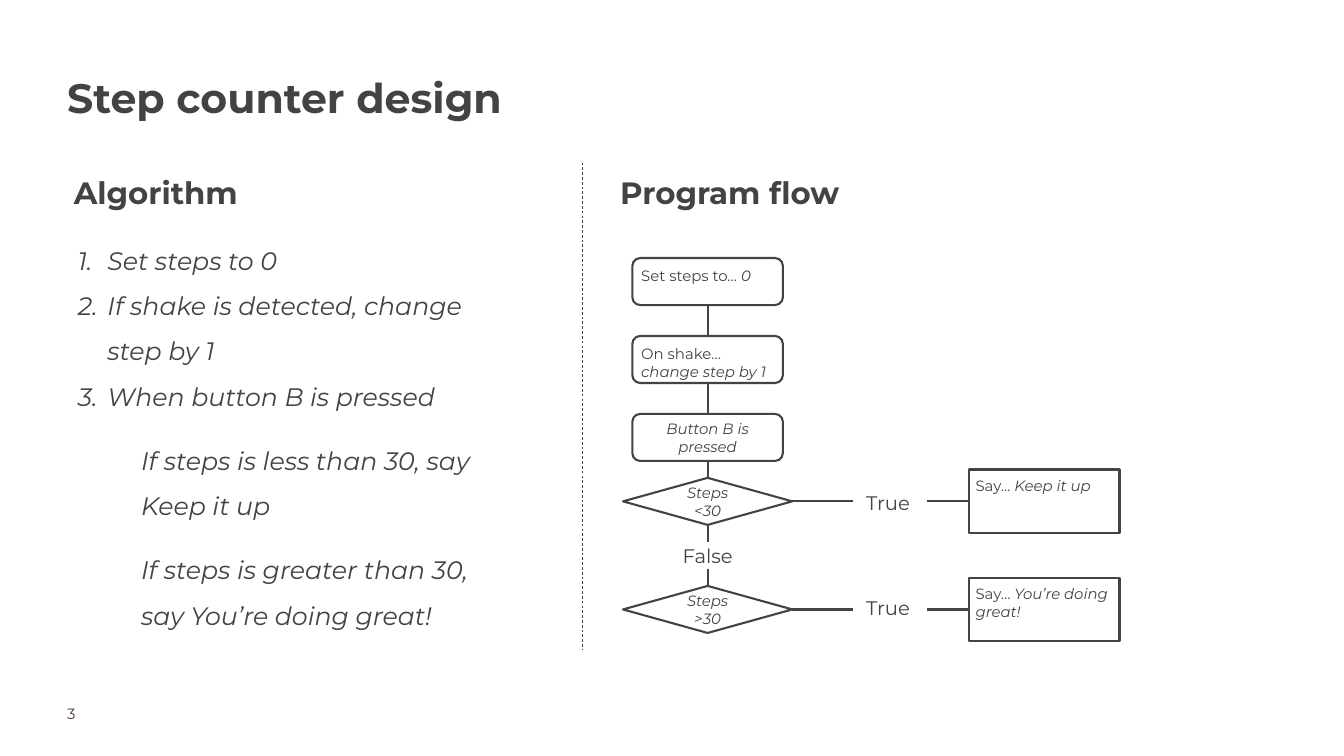
from dataclasses import dataclass

import pptx
import pptx.dml.color
import pptx.enum.dml
import pptx.enum.shapes
import pptx.enum.text
import pptx.oxml
import pptx.oxml.ns
import pptx.util

Pt = pptx.util.Pt
SHAPE = pptx.enum.shapes.MSO_SHAPE
ALIGN = pptx.enum.text.PP_ALIGN
ANCHOR = pptx.enum.text.MSO_ANCHOR
TOP, LEFT, BOTTOM, RIGHT = range(4)

FONT = "Montserrat"
COLORS = {"ink": "434343", "page number": "4B3241"}
INSET = 7.2

FLOW_X = 758.2
STEP_TOP, STEP_PITCH = 276.5, 83.5
STEP_SIZE = (161.3, 50.4)
DECISION_SIZE = (181.4, 50.4)
SAY_LEFT, SAY_SIZE = 1038.2, (161.3, 68.4)
TRUE_LEFT, TRUE_END, TRUE_RESUME = 902.9, 914.4, 993.6
FALSE_TOP, FALSE_END, FALSE_RESUME = 575.3, 580.3, 609.8


@dataclass
class Span:
    text: str
    size: float
    bold: bool = False
    italic: bool = False
    color: str = "ink"


@dataclass
class Para:
    spans: list[Span]
    align: ALIGN = ALIGN.LEFT
    line_spacing: float = 1.0
    space_before: float = 0
    indent: float = 0
    hanging: float = 0
    numbered: bool = False


@dataclass
class Branch:
    question: str
    middle: float
    label_top: float
    answer: str


STEPS = [
    Para([Span("Set steps to… ", 16), Span("0", 16, italic=True)]),
    Para([Span("On shake… ", 16), Span("change step by 1", 16, italic=True)]),
    Para([Span("Button B is pressed", 16, italic=True)], ALIGN.CENTER),
]
BRANCHES = [
    Branch("Steps <30", 537.2, 518.4, "Keep it up"),
    Branch("Steps >30", 653, 630.7, "You’re doing great!"),
]
NUMBERED = ["Set steps to 0", "If shake is detected, change step by 1", "When button B is pressed"]
CONDITIONS = ["If steps is less than 30, say Keep it up", "If steps is greater than 30, say You’re doing great!"]


def color(name: str) -> pptx.dml.color.RGBColor:
    return pptx.dml.color.RGBColor.from_string(COLORS[name])


def number_paragraph(para) -> None:
    """Give a paragraph automatic 1. 2. 3. numbering."""
    properties = para._p.get_or_add_pPr()
    namespace = pptx.oxml.ns.nsdecls("a")
    for xml in (
        f'<a:buClr {namespace}><a:srgbClr val="{COLORS["ink"]}"/></a:buClr>',
        f'<a:buFont {namespace} typeface="{FONT}"/>',
        f'<a:buAutoNum {namespace} type="arabicPeriod"/>',
    ):
        properties.append(pptx.oxml.parse_xml(xml))


def write(box, paras: list[Para], anchor: ANCHOR = ANCHOR.TOP, inset: float = INSET) -> None:
    frame = box.text_frame
    frame.word_wrap = True
    frame.vertical_anchor = anchor
    frame.margin_left = frame.margin_right = Pt(inset)
    frame.margin_top = frame.margin_bottom = Pt(inset)
    for index, content in enumerate(paras):
        para = frame.add_paragraph() if index else frame.paragraphs[0]
        if content.numbered:
            number_paragraph(para)
        para.alignment = content.align
        para.line_spacing = content.line_spacing
        para.space_before = Pt(content.space_before)
        if content.indent:
            properties = para._p.get_or_add_pPr()
            properties.set("marL", str(Pt(content.indent)))
            properties.set("indent", str(Pt(-content.hanging)))
        for span in content.spans:
            run = para.add_run()
            run.text = span.text
            run.font.name = FONT
            run.font.size = Pt(span.size)
            run.font.bold = span.bold
            run.font.italic = span.italic
            run.font.color.rgb = color(span.color)


def add_text(page, left: float, top: float, width: float, height: float, paras: list[Para],
             anchor: ANCHOR = ANCHOR.TOP, inset: float = INSET) -> None:
    box = page.shapes.add_textbox(Pt(left), Pt(top), Pt(width), Pt(height))
    write(box, paras, anchor, inset)


def add_box(page, kind: SHAPE, left: float, top: float, size: tuple[float, float], para: Para):
    box = page.shapes.add_shape(kind, Pt(left), Pt(top), Pt(size[0]), Pt(size[1]))
    box.shadow.inherit = False
    box.fill.background()
    box.line.color.rgb = color("ink")
    box.line.width = Pt(2.25)
    write(box, [para], ANCHOR.MIDDLE if para.align == ALIGN.CENTER else ANCHOR.TOP)
    return box


def add_line(page, start: tuple[float, float], end: tuple[float, float], width: float = 2.25):
    line = page.shapes.add_connector(
        pptx.enum.shapes.MSO_CONNECTOR.STRAIGHT, *(Pt(value) for value in start + end))
    line.line.color.rgb = color("ink")
    line.line.width = Pt(width)
    line._element.spPr.append(
        pptx.oxml.parse_xml(f'<a:effectLst {pptx.oxml.ns.nsdecls("a")}/>'))
    return line


def link_down(page, upper, lower) -> None:
    line = add_line(page, (FLOW_X, 0), (FLOW_X, 0))
    line.begin_connect(upper, BOTTOM)
    line.end_connect(lower, TOP)


def add_label(page, text: str, left: float, top: float, width: float) -> None:
    add_text(page, left, top, width, 40.3, [Para([Span(text, 21)], ALIGN.CENTER)], ANCHOR.MIDDLE)


def add_branch(page, branch: Branch):
    """Draw a decision, its True label and its answer; return the decision."""
    width, height = DECISION_SIZE
    middle = branch.middle
    decision = add_box(page, SHAPE.FLOWCHART_DECISION, FLOW_X - width / 2, middle - height / 2,
                       DECISION_SIZE, Para([Span(branch.question, 16, italic=True)], ALIGN.CENTER))
    answer = add_box(page, SHAPE.RECTANGLE, SAY_LEFT, middle - SAY_SIZE[1] / 2, SAY_SIZE,
                     Para([Span("Say… ", 16), Span(branch.answer, 16, italic=True)]))
    add_line(page, (FLOW_X + width / 2, middle), (TRUE_END, middle)).begin_connect(decision, RIGHT)
    add_line(page, (TRUE_RESUME, middle), (SAY_LEFT, middle)).end_connect(answer, LEFT)
    add_label(page, "True", TRUE_LEFT, branch.label_top, 97.2)
    return decision


def add_flow(page) -> None:
    steps = [
        add_box(page, SHAPE.ROUNDED_RECTANGLE, FLOW_X - STEP_SIZE[0] / 2,
                STEP_TOP + index * STEP_PITCH, STEP_SIZE, para)
        for index, para in enumerate(STEPS)
    ]
    first, second = (add_branch(page, branch) for branch in BRANCHES)
    chain = steps + [first]
    for upper, lower in zip(chain, chain[1:]):
        link_down(page, upper, lower)
    half = DECISION_SIZE[1] / 2
    add_line(page, (FLOW_X, BRANCHES[0].middle + half), (FLOW_X, FALSE_END)).begin_connect(first, BOTTOM)
    add_line(page, (FLOW_X, FALSE_RESUME), (FLOW_X, BRANCHES[1].middle - half)).end_connect(second, TOP)
    add_label(page, "False", FLOW_X - 58.7, FALSE_TOP, 117.4)


def main() -> None:
    deck = pptx.Presentation()
    deck.slide_width, deck.slide_height = Pt(1440), Pt(810)
    page = deck.slides.add_slide(deck.slide_layouts[6])

    add_text(page, 72, 69.8, 766, 128, [Para([Span("Step counter design", 44, bold=True)],
                                             line_spacing=1.15)], inset=0)
    algorithm = [Para([Span("Algorithm", 33, bold=True)], line_spacing=1.15)]
    for index, text in enumerate(NUMBERED):
        algorithm.append(Para([Span(text, 27, italic=True)], line_spacing=1.5, indent=36, hanging=31.7,
                              space_before=0 if index else 20, numbered=True))
    for text in CONDITIONS:
        algorithm.append(Para([Span(text, 27, italic=True)], line_spacing=1.5, indent=72, space_before=20))
    add_text(page, 72, 173.5, 470, 80, algorithm)
    add_text(page, 657.4, 173.5, 470, 80, [Para([Span("Program flow", 33, bold=True)], line_spacing=1.15)])

    divider = add_line(page, (623.9, 174.2), (623.9, 696.2), 0.75)
    divider.line.dash_style = pptx.enum.dml.MSO_LINE.DASH
    add_flow(page)
    add_text(page, 72, 754.6, 113, 28, [Para([Span("3", 16, color="page number")])], inset=0)
    deck.save("out.pptx")


if __name__ == "__main__":
    main()
